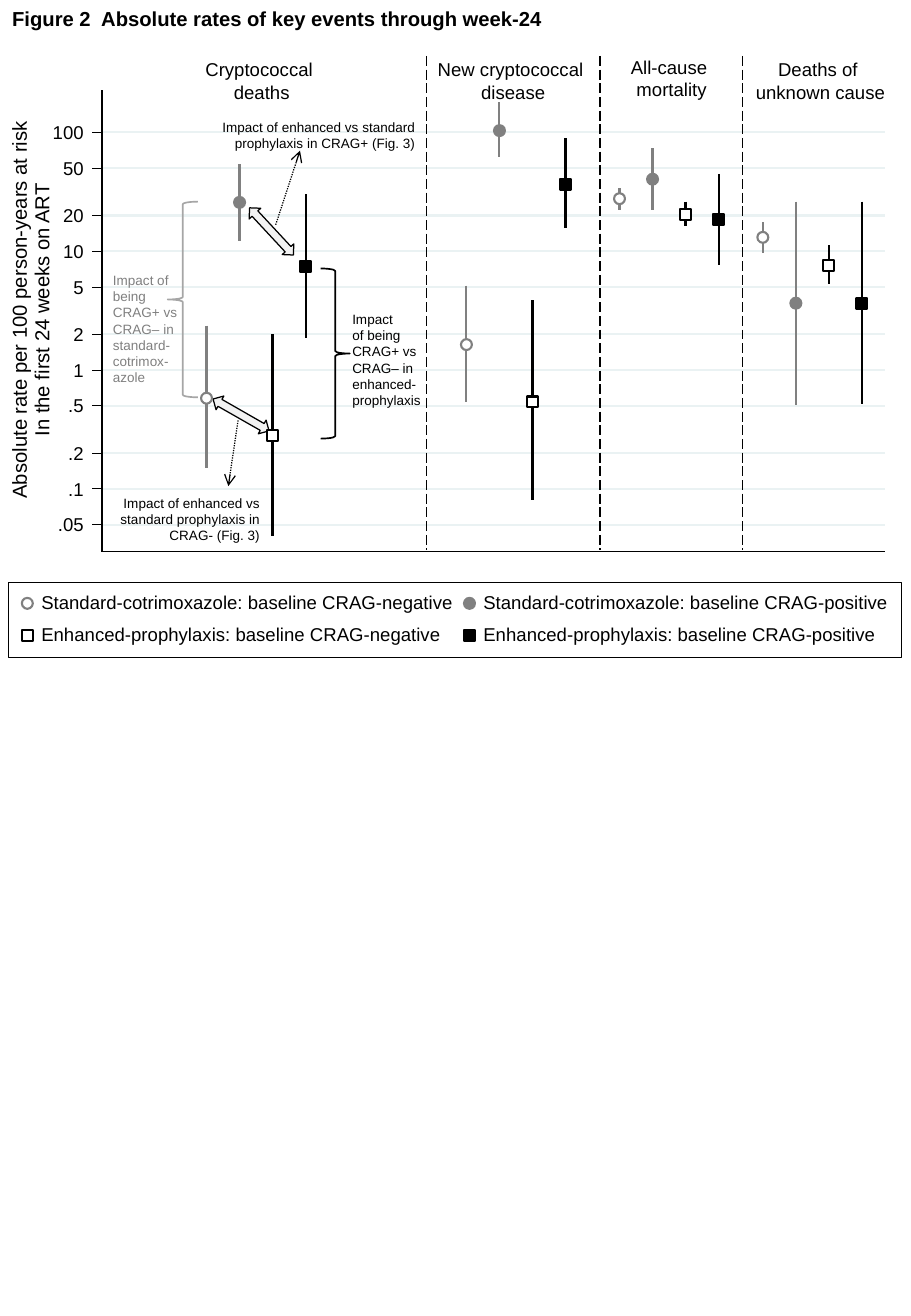
import dataclasses
import math

import lxml.etree
import pptx
import pptx.dml.color
import pptx.enum.dml
import pptx.enum.shapes
import pptx.enum.text
import pptx.oxml.ns
import pptx.util

SHAPE = pptx.enum.shapes.MSO_SHAPE
DASH = pptx.enum.dml.MSO_LINE
ALIGN = pptx.enum.text.PP_ALIGN


@dataclasses.dataclass(frozen=True)
class Theme:
    font: str = "Arial"
    black: str = "000000"
    white: str = "FFFFFF"
    gray: str = "808080"
    brace_gray: str = "A6A6A6"
    arrow_fill: str = "F2F2F2"
    gridline: str = "EAF2F3"
    title_size: float = 12
    label_size: float = 11
    note_size: float = 8
    thin: float = 0.63
    fine: float = 0.75
    brace: float = 1
    bold: float = 1.25


THEME = Theme()
COLUMNS, ROWS = 75, 108.3
AXIS_LEFT, AXIS_RIGHT, AXIS_TOP, AXIS_BOTTOM = 8.4, 72.9, 7.4, 45.4
ROW_OF_100, ROWS_PER_DECADE = 10.9, 9.78
SERIES_STEP = 2.72
MARKER = 0.9

TICKS = [".05", ".1", ".2", ".5", "1", "2", "5", "10", "20", "50", "100"]
SERIES = [
    ("Standard-cotrimoxazole: baseline CRAG-negative", SHAPE.OVAL, THEME.white, THEME.gray),
    ("Standard-cotrimoxazole: baseline CRAG-positive", SHAPE.OVAL, THEME.gray, THEME.gray),
    ("Enhanced-prophylaxis: baseline CRAG-negative", SHAPE.RECTANGLE, THEME.white, THEME.black),
    ("Enhanced-prophylaxis: baseline CRAG-positive", SHAPE.RECTANGLE, THEME.black, THEME.black),
]
PANELS = [
    (["Cryptococcal ", "deaths"], 21.55, 4.8, 17,
     [(0.15, 0.58, 2.37), (12.3, 25.8, 54.2), (0.04, 0.28, 2.01), (1.87, 7.41, 30.1)]),
    (["New cryptococcal ", "disease"], 42.25, 4.8, 38.4,
     [(0.54, 1.64, 5.15), (62.5, 103.6, 180), (0.08, 0.54, 3.88), (15.6, 36.8, 88.9)]),
    (["All-cause ", "mortality"], 55.3, 4.6, 51,
     [(22.2, 27.7, 33.9), (22.2, 40.4, 73.6), (16.3, 20.4, 26.1), (7.68, 18.6, 44.9)]),
    (["Deaths of ", "unknown cause"], 67.55, 4.8, 62.8,
     [(9.73, 13.1, 17.5), (0.51, 3.66, 26.1), (5.27, 7.59, 11.2), (0.52, 3.66, 26.1)]),
]
NOTES = [
    (["Impact of being CRAG+ vs CRAG– in standard-cotrimox-azole"],
     (9.3, 22.4, 5.7, 9.4), ALIGN.LEFT, THEME.gray),
    (["Impact \nof being \nCRAG+ vs CRAG– in enhanced-prophylaxis"],
     (29, 25.6, 7.1, 8.1), ALIGN.LEFT, THEME.black),
    (["Impact of enhanced vs standard prophylaxis in CRAG+ (Fig. 3)"],
     (14.1, 9.8, 20.1, 2.7), ALIGN.RIGHT, THEME.black),
    (["Impact of enhanced vs standard prophylaxis in CRAG- (Fig. 3)"],
     (9.4, 40.7, 12, 4), ALIGN.RIGHT, THEME.black),
]


def grid(*cells):
    return [pptx.util.Inches(cell / 10) for cell in cells]


def rgb(color):
    return pptx.dml.color.RGBColor.from_string(color)


def rate_row(rate):
    return ROW_OF_100 + ROWS_PER_DECADE * math.log10(100 / rate)


def write(frame, lines, size, color=THEME.black, align=ALIGN.LEFT, bold=False):
    frame.word_wrap = True
    frame.auto_size = pptx.enum.text.MSO_AUTO_SIZE.NONE
    frame.vertical_anchor = pptx.enum.text.MSO_ANCHOR.TOP
    frame.margin_left = frame.margin_right = frame.margin_top = frame.margin_bottom = 0
    for index, line in enumerate(lines):
        paragraph = frame.add_paragraph() if index else frame.paragraphs[0]
        paragraph.alignment = align
        for part_index, part in enumerate(line.split("\n")):
            if part_index:
                paragraph.add_line_break()
            run = paragraph.add_run()
            run.text = part
            run.font.name = THEME.font
            run.font.size = pptx.util.Pt(size)
            run.font.bold = bold
            run.font.color.rgb = rgb(color)


def add_label(shapes, lines, box, size, color=THEME.black, align=ALIGN.LEFT, rotation=0):
    label = shapes.add_textbox(*grid(*box))
    label.rotation = rotation
    write(label.text_frame, lines, size, color, align)


def add_line(shapes, start, end, color, width, dash=None, arrow=False):
    connector = shapes.add_connector(
        pptx.enum.shapes.MSO_CONNECTOR.STRAIGHT, *grid(*start, *end))
    connector.line.color.rgb = rgb(color)
    connector.line.width = pptx.util.Pt(width)
    if dash:
        connector.line.dash_style = dash
    properties = connector._element.spPr
    qualified = pptx.oxml.ns.qn
    if arrow:
        lxml.etree.SubElement(
            properties.find(qualified("a:ln")), qualified("a:tailEnd"), type="arrow")
    lxml.etree.SubElement(properties, qualified("a:effectLst"))


def add_figure(shapes, kind, box, fill, color, width, rotation=0):
    shape = shapes.add_shape(kind, *grid(*box))
    shape.shadow.inherit = False
    shape.rotation = rotation
    if fill:
        shape.fill.solid()
        shape.fill.fore_color.rgb = rgb(fill)
    else:
        shape.fill.background()
    shape.line.color.rgb = rgb(color)
    shape.line.width = pptx.util.Pt(width)


def add_marker(shapes, series, column, row):
    _, kind, fill, color = series
    box = (column - MARKER / 2, row - MARKER / 2, MARKER, MARKER)
    add_figure(shapes, kind, box, fill, color, THEME.bold)


def add_title(slide):
    title = slide.shapes.title
    title.left, title.top, title.width, title.height = grid(1, 0.5, 70.9, 2)
    write(title.text_frame, ["Figure 2  Absolute rates of key events through week-24"],
          THEME.title_size, bold=True)


def add_axes(shapes):
    for tick in TICKS:
        row = rate_row(float(tick))
        add_line(shapes, (AXIS_LEFT, row), (AXIS_RIGHT, row), THEME.gridline, THEME.bold)
        add_line(shapes, (AXIS_LEFT, row), (AXIS_LEFT - 0.8, row), THEME.black, THEME.thin)
        add_label(shapes, [tick], (2.9, row - 0.95, 4, 1.9), THEME.label_size, align=ALIGN.RIGHT)
    corner = (AXIS_LEFT, AXIS_BOTTOM)
    for end in ((AXIS_RIGHT, AXIS_BOTTOM), (AXIS_LEFT, AXIS_TOP)):
        add_line(shapes, corner, end, THEME.black, THEME.thin)
    for text, center in (("Absolute rate per 100 person-years at risk", 1.55),
                         ("In the first 24 weeks on ART", 3.4)):
        add_label(shapes, [text], (center - 17, 24.5, 34, 2), THEME.title_size,
                  align=ALIGN.CENTER, rotation=270)
    for column in (35.1, 49.4, 61.1):
        add_line(shapes, (column, 4.6), (column, 45.3), THEME.black, THEME.fine, DASH.LONG_DASH)


def add_annotations(shapes):
    for lines, box, align, color in NOTES:
        add_label(shapes, lines, box, THEME.note_size, color, align)
    for box, rotation in (((19.7, 18.4, 5.3, 1.3), 47.1), ((17.2, 33.5, 5.3, 1.3), 29.7)):
        add_figure(shapes, SHAPE.LEFT_RIGHT_ARROW, box, THEME.arrow_fill, THEME.black,
                   THEME.fine, rotation)
    for start, end in (((22.7, 18.5), (24.7, 12.4)), ((19.6, 34.6), (18.8, 40))):
        add_line(shapes, start, end, THEME.black, THEME.fine, DASH.ROUND_DOT, arrow=True)
    for kind, box, color in (
            (SHAPE.LEFT_BRACE, (13.8, 16.6, 2.5, 16.1), THEME.brace_gray),
            (SHAPE.RIGHT_BRACE, (26.4, 22.1, 2.4, 14), THEME.black)):
        add_figure(shapes, kind, box, None, color, THEME.brace)


def add_panel(shapes, heading, center, top, first_column, rates):
    panel = shapes.add_group_shape().shapes
    for index, (series, (low, estimate, high)) in enumerate(zip(SERIES, rates)):
        column = first_column + index * SERIES_STEP
        add_line(panel, (column, rate_row(high)), (column, rate_row(low)), series[3], THEME.bold)
        add_marker(panel, series, column, rate_row(estimate))
    add_label(panel, heading, (center - 7, top, 14, 3.7), THEME.label_size, align=ALIGN.CENTER)


def add_legend(shapes):
    add_figure(shapes, SHAPE.RECTANGLE, (0.7, 47.9, 73.5, 6.2), THEME.white, THEME.black, THEME.thin)
    for index, series in enumerate(SERIES):
        column = 2.25 + index % 2 * 36.4
        row = 49.65 + index // 2 * 2.65
        add_marker(shapes, series, column, row)
        add_label(shapes, [series[0]], (column + 1.15, row - 1, 35, 1.9), THEME.label_size)


def main():
    presentation = pptx.Presentation()
    presentation.slide_width, presentation.slide_height = grid(COLUMNS, ROWS)
    slide = presentation.slides.add_slide(presentation.slide_layouts.get_by_name("Title Only"))
    add_title(slide)
    add_axes(slide.shapes)
    add_annotations(slide.shapes)
    for panel in PANELS:
        add_panel(slide.shapes, *panel)
    add_legend(slide.shapes)
    presentation.save("out.pptx")


if __name__ == "__main__":
    main()
